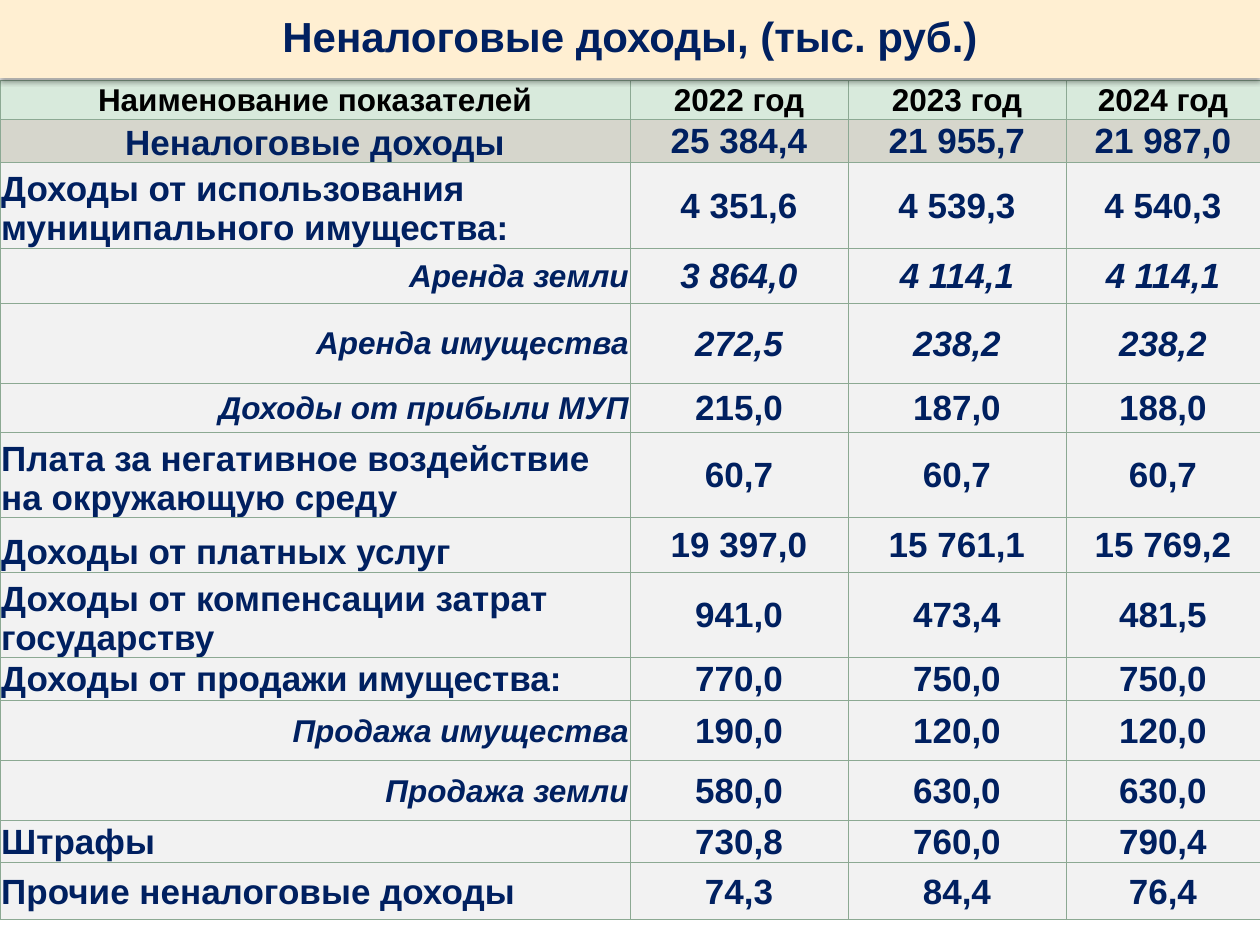
from lxml.etree import SubElement
from pptx import Presentation
from pptx.dml.color import RGBColor
from pptx.enum.text import MSO_ANCHOR, MSO_AUTO_SIZE, PP_ALIGN
from pptx.oxml import parse_xml
from pptx.oxml.ns import nsdecls, qn
from pptx.util import Inches, Pt

THEME = {
    "font": "Arial", "title": 24, "body": 20, "small": 18,
    "navy": "002060", "black": "000000", "banner": "FFEFD2",
    "header": "D8EADC", "total": "D6D6CC", "row": "F2F2F2", "border": "8CA993",
}
YEARS = ["2022 год", "2023 год", "2024 год"]
COL_WIDTHS = [5, 1.73, 1.73, 1.54]
ONE_LINE, TWO_LINES = 0.34, 0.68
CENTER, LEFT, RIGHT = PP_ALIGN.CENTER, PP_ALIGN.LEFT, PP_ALIGN.RIGHT
MIDDLE, BOTTOM = MSO_ANCHOR.MIDDLE, MSO_ANCHOR.BOTTOM

# Row kinds: fill, text colour, name alignment, name anchor, name size, value size
KINDS = {
    "header": ("header", "black", CENTER, MIDDLE, "small", "small"),
    "total": ("total", "navy", CENTER, BOTTOM, "body", "body"),
    "group": ("row", "navy", LEFT, MIDDLE, "body", "body"),
    "group low": ("row", "navy", LEFT, BOTTOM, "body", "body"),
    "detail": ("row", "navy", RIGHT, MIDDLE, "small", "body"),
    "rent": ("row", "navy", RIGHT, MIDDLE, "small", "body"),
}
ROWS = [  # kind, height, name, values by year
    ("header", 0.31, "Наименование показателей", YEARS),
    ("total", ONE_LINE, "Неналоговые доходы", ["25 384,4", "21 955,7", "21 987,0"]),
    ("group low", TWO_LINES, "Доходы от использования муниципального имущества:",
     ["4 351,6", "4 539,3", "4 540,3"]),
    ("rent", 0.44, "Аренда земли", ["3 864,0", "4 114,1", "4 114,1"]),
    ("rent", 0.63, "Аренда имущества", ["272,5", "238,2", "238,2"]),
    ("detail", 0.39, "Доходы от прибыли МУП", ["215,0", "187,0", "188,0"]),
    ("group low", TWO_LINES, "Плата за негативное воздействие на окружающую среду",
     ["60,7", "60,7", "60,7"]),
    ("group low", 0.43, "Доходы от платных услуг", ["19 397,0", "15 761,1", "15 769,2"]),
    ("group low", TWO_LINES, "Доходы от компенсации затрат государству",
     ["941,0", "473,4", "481,5"]),
    ("group", ONE_LINE, "Доходы от продажи имущества:", ["770,0", "750,0", "750,0"]),
    ("detail", 0.48, "Продажа имущества", ["190,0", "120,0", "120,0"]),
    ("detail", 0.47, "Продажа земли", ["580,0", "630,0", "630,0"]),
    ("group", ONE_LINE, "Штрафы", ["730,8", "760,0", "790,4"]),
    ("group", 0.45, "Прочие неналоговые доходы", ["74,3", "84,4", "76,4"]),
]


def write(tf, text, size, color, align, italic=False):
    p = tf.paragraphs[0]
    p.alignment = align
    r = p.add_run()
    r.text = text
    font = {"name": THEME["font"], "size": Pt(THEME[size]), "bold": True, "italic": italic}
    for key, value in font.items():
        setattr(r.font, key, value)
    r.font.color.rgb = RGBColor.from_string(THEME[color])


def add_borders(cell):
    tcPr = cell._tc.get_or_add_tcPr()
    for i, side in enumerate(("lnL", "lnR", "lnT", "lnB")):
        ln = parse_xml(f'<a:{side} {nsdecls("a")} w="{Pt(0.5)}"/>')
        fill = SubElement(ln, qn("a:solidFill"))
        SubElement(fill, qn("a:srgbClr"), val=THEME["border"])
        tcPr.insert(i, ln)


prs = Presentation()
prs.slide_width, prs.slide_height = Inches(10), Inches(7.5)
s = prs.slides.add_slide(prs.slide_layouts[5])

# Income table
heights = [row[1] for row in ROWS]
frame = s.shapes.add_table(len(ROWS), len(COL_WIDTHS), Inches(0), Inches(0.64),
                           Inches(10), Inches(sum(heights)))
table = frame.table
table.horz_banding = False
for column, width in zip(table.columns, COL_WIDTHS):
    column.width = Inches(width)
cell_margins = {"margin_left": 0.01, "margin_right": 0.01, "margin_top": 0.01, "margin_bottom": 0}
for i, (kind, height, name, values) in enumerate(ROWS):
    fill, color, align, anchor, name_size, value_size = KINDS[kind]
    table.rows[i].height = Inches(height)
    for j, text in enumerate([name, *values]):
        cell = table.cell(i, j)
        for key, value in cell_margins.items():
            setattr(cell, key, Inches(value))
        cell.fill.solid()
        cell.fill.fore_color.rgb = RGBColor.from_string(THEME[fill])
        add_borders(cell)
        if j == 0:
            cell.vertical_anchor = anchor
            write(cell.text_frame, text, name_size, color, align, kind in ("rent", "detail"))
        else:
            cell.vertical_anchor = MIDDLE
            write(cell.text_frame, text, value_size, color, CENTER, kind == "rent")

# Title banner, in front of the table so that its shadow falls on the header
title = s.shapes.title
s.shapes._spTree.append(title._element)
box = {"left": 0, "top": 0, "width": 10, "height": 0.62}
for key, value in box.items():
    setattr(title, key, Inches(value))
title.fill.solid()
title.fill.fore_color.rgb = RGBColor.from_string(THEME["banner"])
title._element.spPr.append(parse_xml(
    f'<a:effectLst {nsdecls("a")}><a:outerShdw blurRad="{Pt(3.1)}" dist="{Pt(2)}" '
    f'dir="5400000" rotWithShape="0"><a:srgbClr val="{THEME["black"]}">'
    '<a:alpha val="38000"/></a:srgbClr></a:outerShdw></a:effectLst>'))
tf = title.text_frame
frame_format = {"word_wrap": True, "auto_size": MSO_AUTO_SIZE.NONE,
                "vertical_anchor": MSO_ANCHOR.TOP,
                "margin_top": Inches(0.08), "margin_bottom": Inches(0.05)}
for key, value in frame_format.items():
    setattr(tf, key, value)
write(tf, "Неналоговые доходы, (тыс. руб.)", "title", "navy", CENTER)

prs.save("out.pptx")
